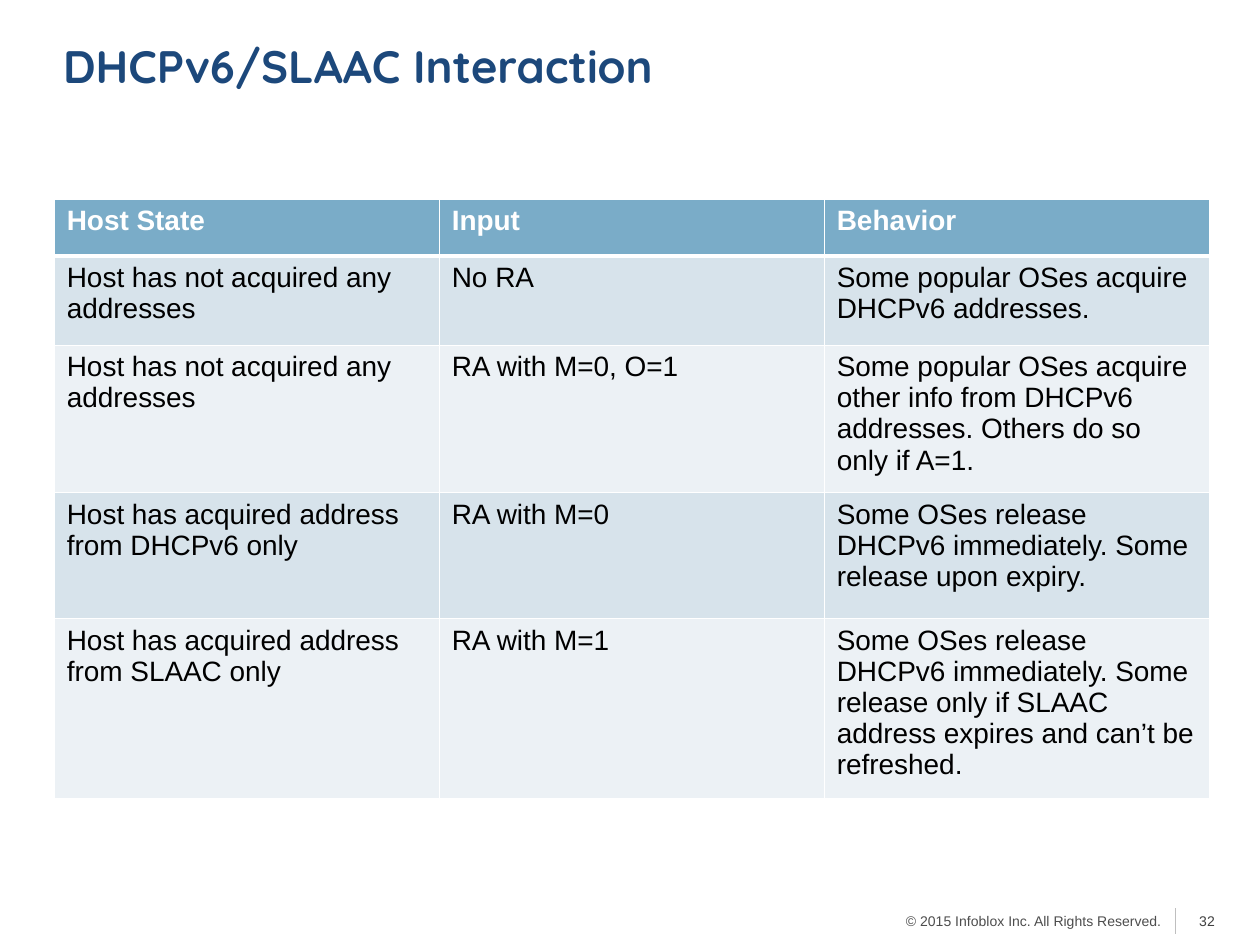
from lxml.etree import SubElement
from pptx import Presentation
from pptx.dml.color import RGBColor
from pptx.enum.shapes import MSO_CONNECTOR
from pptx.enum.text import MSO_ANCHOR, PP_ALIGN
from pptx.oxml.ns import qn
from pptx.util import Pt

HEADER = ["Host State", "Input", "Behavior"]
INTERACTIONS = [
    ["Host has not acquired any addresses", "No RA",
     "Some popular OSes acquire DHCPv6 addresses."],
    ["Host has not acquired any addresses", "RA with M=0, O=1",
     "Some popular OSes acquire other info from DHCPv6 addresses. "
     "Others do so only if A=1."],
    ["Host has acquired address from DHCPv6 only", "RA with M=0",
     "Some OSes release DHCPv6 immediately. Some release upon expiry."],
    ["Host has acquired address from SLAAC only", "RA with M=1",
     "Some OSes release DHCPv6 immediately. Some release only if SLAAC "
     "address expires and can’t be refreshed."],
]
ROW_HEIGHTS = [32.4, 51.1, 84.2, 72, 93.6]


def color(hex_string):
    return RGBColor.from_string(hex_string)


class SlideBuilder:
    body_font = "Arial"
    title_font = "Quicksand"
    title_color = "1C487B"
    header_fill = "7AACC8"
    band_fills = ["D7E3EB", "ECF1F5"]
    border_color = "FFFFFF"

    def __init__(self, slide):
        self.slide = slide

    def style(self, paragraph, size, hex_string, bold=False, name=None):
        font = paragraph.font
        font.name = name or self.body_font
        font.size = Pt(size)
        font.bold = bold
        font.color.rgb = color(hex_string)

    def text(self, box, content, size, hex_string, align=PP_ALIGN.LEFT):
        shape = self.slide.shapes.add_textbox(*map(Pt, box))
        frame = shape.text_frame
        frame.word_wrap = True
        paragraph = frame.paragraphs[0]
        paragraph.text = content
        paragraph.alignment = align
        self.style(paragraph, size, hex_string)
        return frame

    def title(self, box, content):
        frame = self.text(box, content, 26, self.title_color)
        frame.vertical_anchor = MSO_ANCHOR.MIDDLE
        frame.margin_left = frame.margin_right = 0
        frame.margin_top = frame.margin_bottom = 0
        self.style(frame.paragraphs[0], 26, self.title_color, True, self.title_font)

    def line(self, start, end, hex_string, width):
        connector = self.slide.shapes.add_connector(
            MSO_CONNECTOR.STRAIGHT, *map(Pt, start + end))
        connector.line.color.rgb = color(hex_string)
        connector.line.width = Pt(width)
        SubElement(connector._element.spPr, qn("a:effectLst"))

    def border(self, cell, side, width):
        """Draw one cell edge; side is L, R, T or B."""
        properties = cell._tc.get_or_add_tcPr()
        edge = SubElement(properties, qn(f"a:ln{side}"), w=str(Pt(width)))
        fill = SubElement(edge, qn("a:solidFill"))
        SubElement(fill, qn("a:srgbClr"), val=self.border_color)

    def cell(self, cell, content, is_header, fill):
        for side in "LRTB":
            self.border(cell, side, 3 if is_header and side == "B" else 1)
        cell.fill.solid()
        cell.fill.fore_color.rgb = color(fill)
        cell.text = content
        self.style(cell.text_frame.paragraphs[0], 16,
                   "FFFFFF" if is_header else "000000", is_header)

    def table(self, left, top, width, row_heights, rows):
        shape = self.slide.shapes.add_table(
            len(rows), len(rows[0]), Pt(left), Pt(top), Pt(width), Pt(sum(row_heights)))
        table = shape.table
        for row, height in zip(table.rows, row_heights):
            row.height = Pt(height)
        for row_index, values in enumerate(rows):
            is_header = row_index == 0
            fill = self.header_fill if is_header else self.band_fills[(row_index - 1) % 2]
            for column_index, value in enumerate(values):
                self.cell(table.cell(row_index, column_index), value, is_header, fill)


def main():
    presentation = Presentation()
    presentation.slide_width = Pt(720)
    presentation.slide_height = Pt(540)
    builder = SlideBuilder(presentation.slides.add_slide(presentation.slide_layouts[6]))

    builder.text((339.8, 517.7, 331.2, 19.4),
                 "© 2015 Infoblox Inc. All Rights Reserved.", 8, "4D4D4D", PP_ALIGN.RIGHT)
    builder.line((671.8, 519), (671.8, 534), "BFBFBF", 1)
    builder.text((678.2, 517.7, 30.2, 14.4), "32", 8, "404040")
    builder.title((36, 7.2, 666, 59.8), "DHCPv6/SLAAC Interaction")
    builder.table(31, 113.8, 660, ROW_HEIGHTS, [HEADER] + INTERACTIONS)

    presentation.save("out.pptx")


if __name__ == "__main__":
    main()
